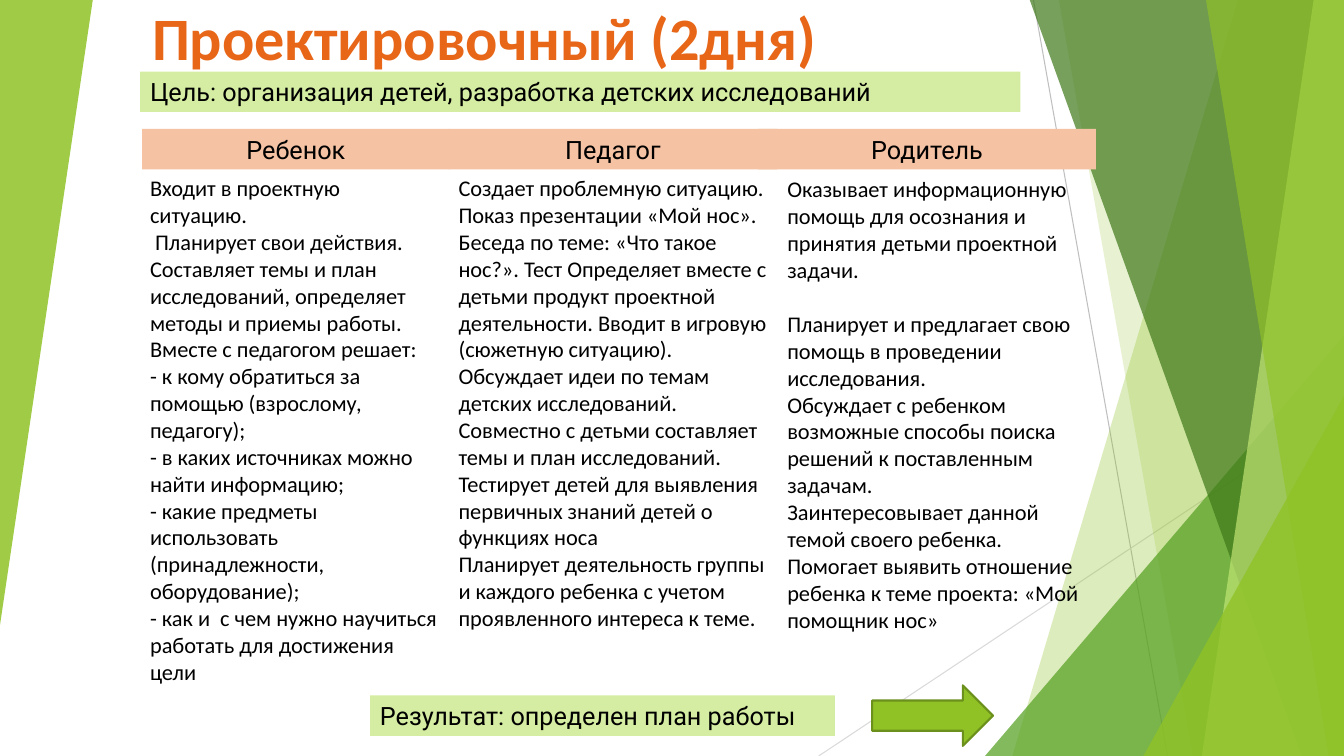
from lxml import etree
from pptx import Presentation
from pptx import util as u
from pptx.dml.color import RGBColor
from pptx.enum import shapes, text
from pptx.oxml.ns import qn

GREEN = "90C226"
PALE_GREEN = "D5EDA2"
PEACH = "F5C2A3"
BLACK = "000000"

COLUMNS = [
    # heading, heading left and width, text left and width, top offset, paragraphs
    ("Ребенок", 1.41, 3.05, 1.39, 3.06, 0, [
        "Входит в проектную ситуацию.",
        " Планирует свои действия. Составляет темы и план исследований, "
        "определяет методы и приемы работы.",
        "Вместе с педагогом решает:",
        "- к кому обратиться за помощью (взрослому, педагогу);",
        "- в каких источниках можно найти информацию;",
        "- какие предметы использовать (принадлежности, оборудование);",
        "- как и  с чем нужно научиться работать для достижения цели"]),
    ("Педагог", 4.45, 3.26, 4.45, 3.26, 0, [
        "Создает проблемную ситуацию. Показ презентации «Мой нос». Беседа по теме: "
        "«Что такое нос?». Тест Определяет вместе с детьми продукт проектной "
        "деятельности. Вводит в игровую (сюжетную ситуацию).",
        "Обсуждает идеи по темам детских исследований. Совместно с детьми составляет "
        "темы и план исследований. Тестирует детей для выявления первичных знаний "
        "детей о функциях носа",
        "Планирует деятельность группы и каждого ребенка с учетом проявленного "
        "интереса к теме."]),
    ("Родитель", 7.52, 3.35, 7.71, 3.15, 0.01, [
        "Оказывает информационную помощь для осознания и принятия детьми "
        "проектной задачи.",
        "Планирует и предлагает свою помощь в проведении исследования.",
        "Обсуждает с ребенком возможные способы поиска решений к поставленным задачам.",
        "Заинтересовывает данной темой своего ребенка.",
        "Помогает выявить отношение ребенка к теме проекта: «Мой помощник нос»"]),
]


def rgb(value):
    return RGBColor.from_string(value)


def paint(sp, color, opacity=100):
    sp.shadow.inherit = False
    sp.fill.solid()
    sp.fill.fore_color.rgb = rgb(color)
    sp.line.fill.background()
    if opacity < 100:
        clr = sp.fill._xPr.find(".//" + qn("a:srgbClr"))
        etree.SubElement(clr, qn("a:alpha"), val=str(opacity * 1000))


def write(sp, lines, size, font, color=BLACK, align=text.PP_ALIGN.LEFT, bold=False):
    tf = sp.text_frame
    tf.word_wrap = True
    tf.auto_size = text.MSO_AUTO_SIZE.SHAPE_TO_FIT_TEXT
    for i, line in enumerate(lines):
        p = tf.paragraphs[0] if i == 0 else tf.add_paragraph()
        p.text = line
        p.alignment = align
        p.font.size = u.Pt(size)
        p.font.name = font
        p.font.bold = bold
        p.font.color.rgb = rgb(color)
    return tf


def add_preset(slide, kind, box, color, opacity=100):
    sp = slide.shapes.add_shape(kind, *map(u.Inches, box))
    paint(sp, color, opacity)
    return sp


def add_triangle(slide, box, color, opacity):
    sp = add_preset(slide, shapes.MSO_SHAPE.ISOSCELES_TRIANGLE, box, color, opacity)
    sp.adjustments[0] = 1
    return sp


def add_band(slide, box, label, color, align=text.PP_ALIGN.LEFT):
    sp = add_preset(slide, shapes.MSO_SHAPE.RECTANGLE, box, color)
    write(sp, [label], 18, "Roboto", align=align)


def add_text(slide, box, lines, size, **style):
    sp = slide.shapes.add_textbox(*map(u.Inches, box))
    return write(sp, lines, size, "Calibri", **style)


def add_hairline(slide, start, end, color):
    line = slide.shapes.add_connector(
        shapes.MSO_CONNECTOR.STRAIGHT, *map(u.Inches, start + end))
    line.line.color.rgb = rgb(color)
    line.line.width = u.Pt(0.75)
    etree.SubElement(line._element.spPr, qn("a:effectLst"))


def add_shard(slide, box, top_x, bottom_x, color, opacity):
    """Four-sided shard between a slanted left edge and the right side of box."""
    left, top, width, height = box
    right, bottom = left + width, top + height
    points = [(top_x, top), (right, top), (right, bottom), (bottom_x, bottom)]
    points = [tuple(map(u.Inches, point)) for point in points]
    fb = slide.shapes.build_freeform(*points[0])
    fb.add_line_segments(points[1:], close=True)
    paint(fb.convert_to_shape(), color, opacity)


def add_backdrop(slide, box):
    left, top, width, height = box
    right, bottom = left + width, top + height
    shard_box = (left, top - 0.01, width, height + 0.01)

    def corner(w, h):
        return right - w, bottom - h, w, h

    add_hairline(slide, (10.25, top), (11.58, bottom), "BFBFBF")
    add_hairline(slide, (right, 4.03), (8.12, bottom), "D9D9D9")
    add_shard(slide, shard_box, 12.28, 10.04, GREEN, 30)
    add_shard(slide, shard_box, 10.5, 11.83, GREEN, 20)
    add_triangle(slide, corner(3.56, 4.17), "54A021", 72)
    add_shard(slide, shard_box, 10.21, 12.91, "3F7819", 70)
    add_shard(slide, shard_box, 13.03, 11.92, "C0E474", 70)
    add_shard(slide, shard_box, 11.96, 13.18, GREEN, 65)
    add_triangle(slide, corner(1.99, 3.57), GREEN, 80)
    add_triangle(slide, (left, top, 0.92, 6.2), GREEN, 85).rotation = 180


def add_header(slide, box):
    left, top, width, height = box
    add_text(slide, (left + 0.02, top, 8.44, 0.82), ["Проектировочный (2дня)"], 43,
             color="E76618", bold=True)
    add_band(slide, (left, top + height - 0.4, width, 0.4),
             "Цель: организация детей, разработка детских исследований", PALE_GREEN)


def add_columns(slide, top, height):
    for heading, x, width, _, _, _, _ in COLUMNS:
        add_band(slide, (x, top, width, 0.4), heading, PEACH, text.PP_ALIGN.CENTER)
    for heading, _, _, x, width, offset, lines in COLUMNS:
        tf = add_text(slide, (x, top + 0.4 + offset, width, height - 0.4), lines, 16)
        if heading == "Родитель":
            tf.paragraphs[0].space_after = u.Pt(19.5)  # one line of air


def add_result(slide, box):
    left, top, width, height = box
    add_band(slide, (left, top + 0.1, 4.61, 0.4),
             "Результат: определен план работы", PALE_GREEN)
    arrow = add_preset(slide, shapes.MSO_SHAPE.RIGHT_ARROW,
                       (left + width - 1.2, top, 1.2, height), GREEN)
    arrow.line.color.rgb = rgb("6B901C")
    arrow.line.width = u.Pt(1.5)


def main():
    prs = Presentation()
    prs.slide_width, prs.slide_height = u.Inches(13.33), u.Inches(7.5)
    slide = prs.slides.add_slide(prs.slide_layouts[6])
    add_backdrop(slide, (0, 0, 13.33, 7.5))
    add_header(slide, (1.39, -0.05, 8.73, 1.16))
    add_columns(slide, 1.28, 5.62)
    add_result(slide, (3.67, 6.8, 6.18, 0.6))
    prs.save("out.pptx")


if __name__ == "__main__":
    main()
